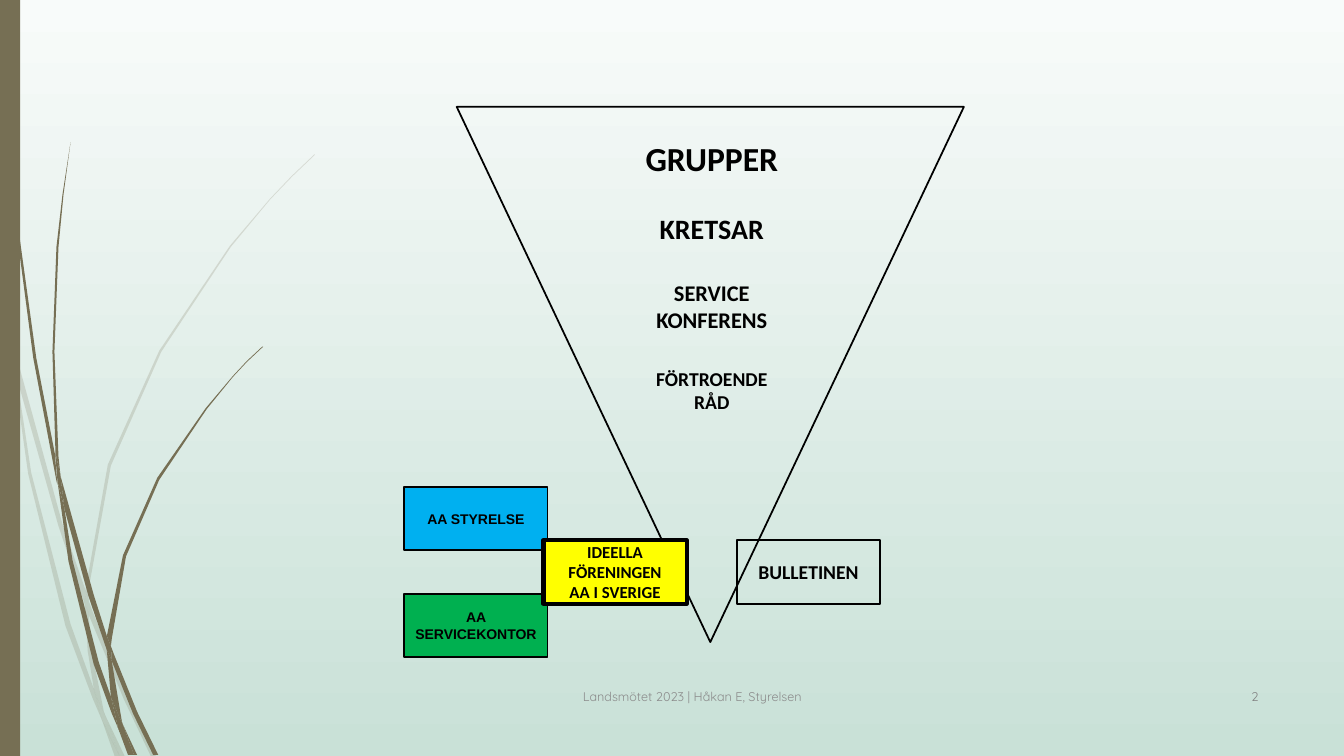
from dataclasses import dataclass

from lxml import etree
from pptx import Presentation
from pptx import util as u
from pptx.dml.color import RGBColor
from pptx.enum import shapes, text
from pptx.oxml.ns import qn

EMU_PER_PX = 9144
BLACK = "000000"
OLIVE = "766F54"
LABEL_WIDTH, LABEL_HEIGHT = 142, 63


@dataclass(frozen=True)
class Grass:
    opacity: int
    blades: tuple[tuple[tuple[int, int], ...], ...]


@dataclass(frozen=True)
class Unit:
    lines: tuple[str, ...]
    left: int
    top: int
    size: int
    font: str = "Calibri"
    fill: str | None = None
    border: float = 1.25


@dataclass(frozen=True)
class Level:
    name: str
    size: int
    gap: int = 0


@dataclass(frozen=True)
class FooterPart:
    words: str
    left: int
    width: int
    align: text.PP_ALIGN
    color: str


PALE_GRASS = Grass(20, (
    ((11, 350), (9, 322), (0, 282), (0, 299), (10, 344)),
    ((58, 522), (84, 599), (85, 586), (62, 520), (14, 345), (17, 376)),
    ((92, 607), (88, 596), (88, 610), (123, 694), (150, 751), (155, 751), (127, 692)),
    ((119, 751), (124, 751), (105, 711)),
    ((93, 683), (70, 619), (31, 469), (17, 376), (11, 350), (28, 470), (65, 621),
     (92, 693), (101, 714), (99, 707)),
    ((84, 599), (87, 646), (93, 683), (96, 692), (105, 711), (103, 706), (91, 646),
     (88, 610), (88, 608)),
    ((88, 584), (110, 462), (160, 349), (229, 245), (268, 198), (290, 175), (312, 154),
     (312, 153), (289, 175), (268, 197), (228, 244), (158, 348), (107, 461), (85, 584),
     (85, 586), (88, 596)),
    ((101, 714), (114, 751), (119, 751)),
    ((88, 608), (88, 610), (88, 596), (85, 586), (84, 599)),
    ((96, 692), (93, 683), (99, 707), (101, 714), (119, 751), (105, 711)),
))
DARK_GRASS = Grass(100, (
    ((7, 110), (17, 233), (33, 355), (56, 477), (57, 481), (55, 457), (55, 453), (36, 355),
     (19, 232), (8, 109), (5, 48), (4, 0), (3, 0), (4, 48)),
    ((88, 592), (106, 645), (106, 633), (106, 631), (93, 590), (60, 472), (64, 505)),
    ((113, 649), (110, 641), (111, 656), (132, 708), (152, 749), (157, 749), (136, 706)),
    ((110, 691), (98, 657), (72, 556), (64, 505), (57, 477), (68, 557), (93, 659),
     (111, 708), (117, 722), (116, 717)),
    ((60, 472), (58, 453), (54, 349), (58, 245), (63, 193), (70, 141), (62, 193),
     (56, 245), (52, 349), (55, 449)),
    ((133, 749), (136, 749), (122, 719)),
    ((57, 477), (64, 505), (60, 472), (55, 449), (55, 453)),
    ((111, 633), (125, 552), (158, 476), (205, 406), (231, 374), (245, 359), (261, 344),
     (260, 344), (245, 358), (231, 373), (204, 405), (156, 474), (122, 551), (106, 631),
     (110, 641)),
    ((117, 722), (127, 749), (131, 749)),
    ((106, 645), (110, 691), (116, 706), (122, 719), (121, 716), (111, 656), (109, 651)),
    ((106, 645), (109, 651), (111, 656), (110, 641), (106, 631), (106, 633)),
    ((116, 706), (110, 691), (116, 717), (117, 722), (130, 749), (133, 749), (122, 719)),
))
OFFICES = (
    Unit(("AA STYRELSE",), 401, 483, 10, "Arial", "00B0F0"),
    Unit(("AA SERVICEKONTOR",), 401, 589, 10, "Arial", "00B050"),
)
SERVICES = (
    Unit(("IDEELLA", "FÖRENINGEN", "AA I SVERIGE"), 539, 536, 12, fill="FFFF00", border=3),
    Unit(("BULLETINEN",), 731, 536, 14),
)
LEVELS = (
    Level("GRUPPER", 24),
    Level("KRETSAR", 20, 24),
    Level("SERVICE", 16, 24),
    Level("KONFERENS", 16),
    Level("FÖRTROENDE", 14, 24),
    Level("RÅD", 14),
)
FOOTER = (
    FooterPart("Landsmötet 2023 | Håkan E, Styrelsen", 302, 769, text.PP_ALIGN.CENTER, "8C8C8C"),
    FooterPart("2", 1173, 85, text.PP_ALIGN.RIGHT, "808080"),
)


def px(length: int) -> u.Emu:
    return u.Emu(length * EMU_PER_PX)


def rgb(color: str) -> RGBColor:
    return RGBColor.from_string(color)


def paint(shape, fill: str | None, border: float = 0) -> None:
    shape.shadow.inherit = False
    if fill:
        shape.fill.solid()
        shape.fill.fore_color.rgb = rgb(fill)
    else:
        shape.fill.background()
    if border:
        shape.line.color.rgb = rgb(BLACK)
        shape.line.width = u.Pt(border)
    else:
        shape.line.fill.background()


def write(paragraph, words: str, size: int, font: str = "Calibri", color: str = BLACK,
          bold: bool = True, align: text.PP_ALIGN = text.PP_ALIGN.CENTER) -> None:
    paragraph.text = words
    paragraph.alignment = align
    paragraph.font.name = font
    paragraph.font.size = u.Pt(size)
    paragraph.font.bold = bold
    paragraph.font.color.rgb = rgb(color)


def next_paragraph(frame, index: int):
    return frame.add_paragraph() if index else frame.paragraphs[0]


def draw_grass(slide, grass: Grass) -> None:
    for outline in grass.blades:
        builder = slide.shapes.build_freeform(*outline[0], scale=EMU_PER_PX)
        builder.add_line_segments(outline[1:], close=True)
        blade = builder.convert_to_shape()
        paint(blade, OLIVE)
        if grass.opacity < 100:
            tint = next(blade._element.spPr.iter(qn("a:srgbClr")))
            etree.SubElement(tint, qn("a:alpha"), val=str(grass.opacity * 1000))


def draw_unit(slide, unit: Unit) -> None:
    box = slide.shapes.add_shape(shapes.MSO_SHAPE.RECTANGLE, px(unit.left), px(unit.top),
                                 px(LABEL_WIDTH), px(LABEL_HEIGHT))
    paint(box, unit.fill, unit.border)
    frame = box.text_frame
    frame.word_wrap = True
    frame.vertical_anchor = text.MSO_ANCHOR.MIDDLE
    for i, line in enumerate(unit.lines):
        write(next_paragraph(frame, i), line, unit.size, unit.font)


def draw_footer(slide, part: FooterPart) -> None:
    frame = slide.shapes.add_textbox(px(part.left), px(671), px(part.width), px(40)).text_frame
    frame.word_wrap = True
    frame.vertical_anchor = text.MSO_ANCHOR.MIDDLE
    write(frame.paragraphs[0], part.words, 9, "Quicksand", part.color, False, part.align)


def draw_hierarchy(slide) -> None:
    pyramid = slide.shapes.add_shape(shapes.MSO_SHAPE.ISOSCELES_TRIANGLE,
                                     px(453), px(106), px(503), px(531))
    pyramid.rotation = 180
    paint(pyramid, None, 1.25)
    frame = slide.shapes.add_textbox(px(629), px(132), px(154), px(286)).text_frame
    frame.word_wrap = False
    for i, level in enumerate(LEVELS):
        paragraph = next_paragraph(frame, i)
        write(paragraph, level.name, level.size)
        if level.gap:
            paragraph.space_before = u.Pt(level.gap)


def main() -> None:
    deck = Presentation()
    deck.slide_width, deck.slide_height = px(1333), px(750)
    slide = deck.slides.add_slide(deck.slide_layouts[6])
    backdrop = slide.background.fill
    backdrop.gradient()
    backdrop.gradient_angle = 270
    for stop, color in zip(backdrop.gradient_stops, ("F8FBFA", "C9E1D7")):
        stop.color.rgb = rgb(color)
    for grass in (PALE_GRASS, DARK_GRASS):
        draw_grass(slide, grass)
    side_bar = slide.shapes.add_shape(shapes.MSO_SHAPE.RECTANGLE, 0, 0, px(20), px(750))
    paint(side_bar, OLIVE)
    for office in OFFICES:
        draw_unit(slide, office)
    for part in FOOTER:
        draw_footer(slide, part)
    draw_hierarchy(slide)
    for service in SERVICES:
        draw_unit(slide, service)
    deck.save("out.pptx")


if __name__ == "__main__":
    main()
